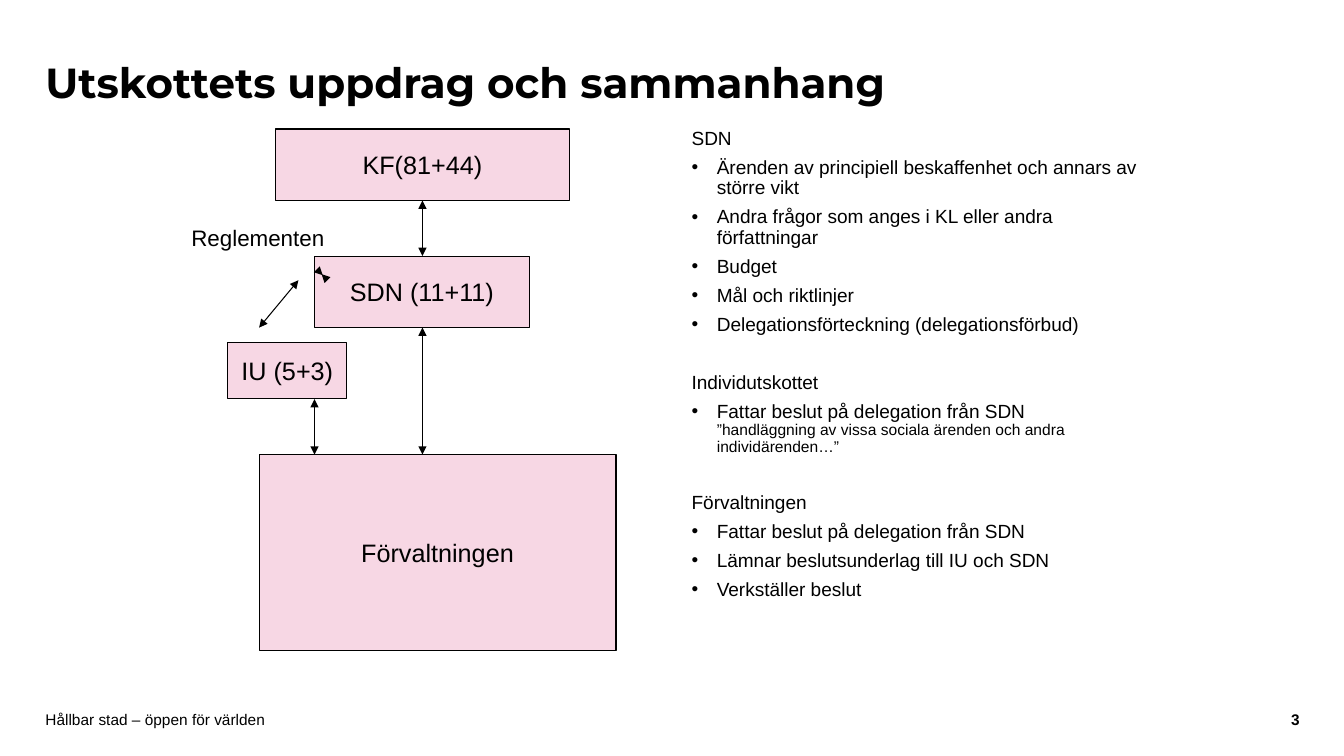
"""Build a slide on the committee's role, with a flow diagram and duties."""
from dataclasses import dataclass

from lxml.etree import SubElement
from pptx import Presentation
from pptx.dml.color import RGBColor
from pptx.enum.shapes import MSO_CONNECTOR as CONN, MSO_SHAPE as SHAPE
from pptx.enum.text import MSO_ANCHOR as ANCHOR, PP_ALIGN as ALIGN
from pptx.oxml.ns import qn
from pptx.util import Pt

PX = 9144
COLORS = {"text": "000000", "line": "000000", "box": "F7D7E4", "page": "FFFFFF"}


@dataclass(frozen=True)
class Node:
    text: str
    x: int
    y: int
    w: int
    h: int


@dataclass(frozen=True)
class Arrow:
    x1: int
    y1: int
    x2: int
    y2: int


@dataclass(frozen=True)
class Label:
    text: str
    x: int
    y: int
    w: int
    h: int
    size: float
    font: str = "Arial"
    bold: bool = False
    align: ALIGN = ALIGN.LEFT
    anchor: ANCHOR = ANCHOR.MIDDLE
    inset: tuple[int, int] = (0, 0)
    wrap: bool = True
    spacing: float = 1.0


@dataclass(frozen=True)
class Group:
    heading: str
    bullets: tuple[str, ...]
    quotes: tuple[str, ...] = ()


NODES = [
    Node("KF(81+44)", 273, 128, 292, 71),
    Node("SDN (11+11)", 312, 254, 213, 71),
    Node("IU (5+3)", 226, 340, 118, 55),
    Node("Förvaltningen", 257, 451, 354, 194),
]
ARROWS = [
    Arrow(419, 199, 419, 254),
    Arrow(419, 325, 419, 451),
    Arrow(312, 396, 312, 451),
    Arrow(296, 278, 257, 325),
    Arrow(319, 272, 320, 273),
]
LABELS = [
    Label("Utskottets uppdrag och sammanhang", 45, 44, 1003, 81, 30,
          font="Montserrat", bold=True, inset=(0, 5), spacing=0.9),
    Label("Reglementen", 180, 217, 153, 37, 16,
          anchor=ANCHOR.TOP, inset=(10, 5), wrap=False),
    Label("Hållbar stad – öppen för världen", 45, 706, 945, 16, 11),
    Label("3", 1225, 706, 64, 16, 11, bold=True, align=ALIGN.RIGHT),
]
GROUPS = [
    Group("SDN", (
        "Ärenden av principiell beskaffenhet och annars av större vikt",
        "Andra frågor som anges i KL eller andra författningar",
        "Budget",
        "Mål och riktlinjer",
        "Delegationsförteckning (delegationsförbud)",
    )),
    Group("Individutskottet", ("Fattar beslut på delegation från SDN",), (
        "”handläggning av vissa sociala ärenden och andra individärenden…”",
    )),
    Group("Förvaltningen", (
        "Fattar beslut på delegation från SDN",
        "Lämnar beslutsunderlag till IU och SDN",
        "Verkställer beslut",
    )),
]


def rgb(name: str) -> RGBColor:
    return RGBColor.from_string(COLORS[name])


def add_run(p, text: str, size: float, font: str = "Arial", bold: bool = False) -> None:
    r = p.add_run()
    r.text = text
    r.font.size = Pt(size)
    r.font.name = font
    r.font.bold = bold
    r.font.color.rgb = rgb("text")


def add_text_frame(s, x: int, y: int, w: int, h: int, inset: tuple[int, int], wrap: bool):
    tf = s.shapes.add_textbox(x * PX, y * PX, w * PX, h * PX).text_frame
    tf.word_wrap = wrap
    tf.margin_left = tf.margin_right = inset[0] * PX
    tf.margin_top = tf.margin_bottom = inset[1] * PX
    return tf


def draw_label(s, label: Label) -> None:
    tf = add_text_frame(s, label.x, label.y, label.w, label.h, label.inset, label.wrap)
    tf.vertical_anchor = label.anchor
    p = tf.paragraphs[0]
    p.alignment = label.align
    p.line_spacing = label.spacing
    add_run(p, label.text, label.size, label.font, label.bold)


def draw_node(s, node: Node) -> None:
    sp = s.shapes.add_shape(SHAPE.RECTANGLE, node.x * PX, node.y * PX, node.w * PX, node.h * PX)
    sp.shadow.inherit = False
    sp.fill.solid()
    sp.fill.fore_color.rgb = rgb("box")
    sp.line.color.rgb = rgb("line")
    sp.line.width = Pt(0.75)
    tf = sp.text_frame
    tf.word_wrap = False
    tf.vertical_anchor = ANCHOR.MIDDLE
    p = tf.paragraphs[0]
    p.alignment = ALIGN.CENTER
    add_run(p, node.text, 18)


def draw_arrow(s, arrow: Arrow) -> None:
    c = s.shapes.add_connector(
        CONN.STRAIGHT, arrow.x1 * PX, arrow.y1 * PX, arrow.x2 * PX, arrow.y2 * PX)
    c.line.color.rgb = rgb("line")
    c.line.width = Pt(0.75)
    ln = c.line._get_or_add_ln()
    for end in ("a:headEnd", "a:tailEnd"):
        SubElement(ln, qn(end), type="triangle")
    SubElement(c._element.spPr, qn("a:effectLst"))


def add_item(tf, text: str, before: float, size: float = 13.6,
             hang: int = 25, bullet: bool = False) -> None:
    p = tf.paragraphs[0] if not tf.text else tf.add_paragraph()
    ppr = p._p.get_or_add_pPr()
    ppr.set("marL", str(25 * PX))
    ppr.set("indent", str(-hang * PX))
    if bullet:
        SubElement(ppr, qn("a:buFont"), typeface="Arial")
        SubElement(ppr, qn("a:buChar"), char="•")
    p.line_spacing = 0.9
    p.space_before = Pt(before)
    add_run(p, text, size)


def draw_duties(s, groups: list[Group]) -> None:
    tf = add_text_frame(s, 686, 128, 444, 480, (0, 0), True)
    for i, group in enumerate(groups):
        add_item(tf, group.heading, 26.7 if i else 0)
        for text in group.bullets:
            add_item(tf, text, 6, bullet=True)
        for text in group.quotes:
            add_item(tf, text, 0, size=11.1, hang=0)


def main() -> None:
    prs = Presentation()
    prs.slide_width, prs.slide_height = 1333 * PX, 750 * PX
    s = prs.slides.add_slide(prs.slide_layouts[6])
    s.background.fill.solid()
    s.background.fill.fore_color.rgb = rgb("page")
    for node in NODES:
        draw_node(s, node)
    for arrow in ARROWS:
        draw_arrow(s, arrow)
    for label in LABELS:
        draw_label(s, label)
    draw_duties(s, GROUPS)
    prs.save("out.pptx")


if __name__ == "__main__":
    main()
